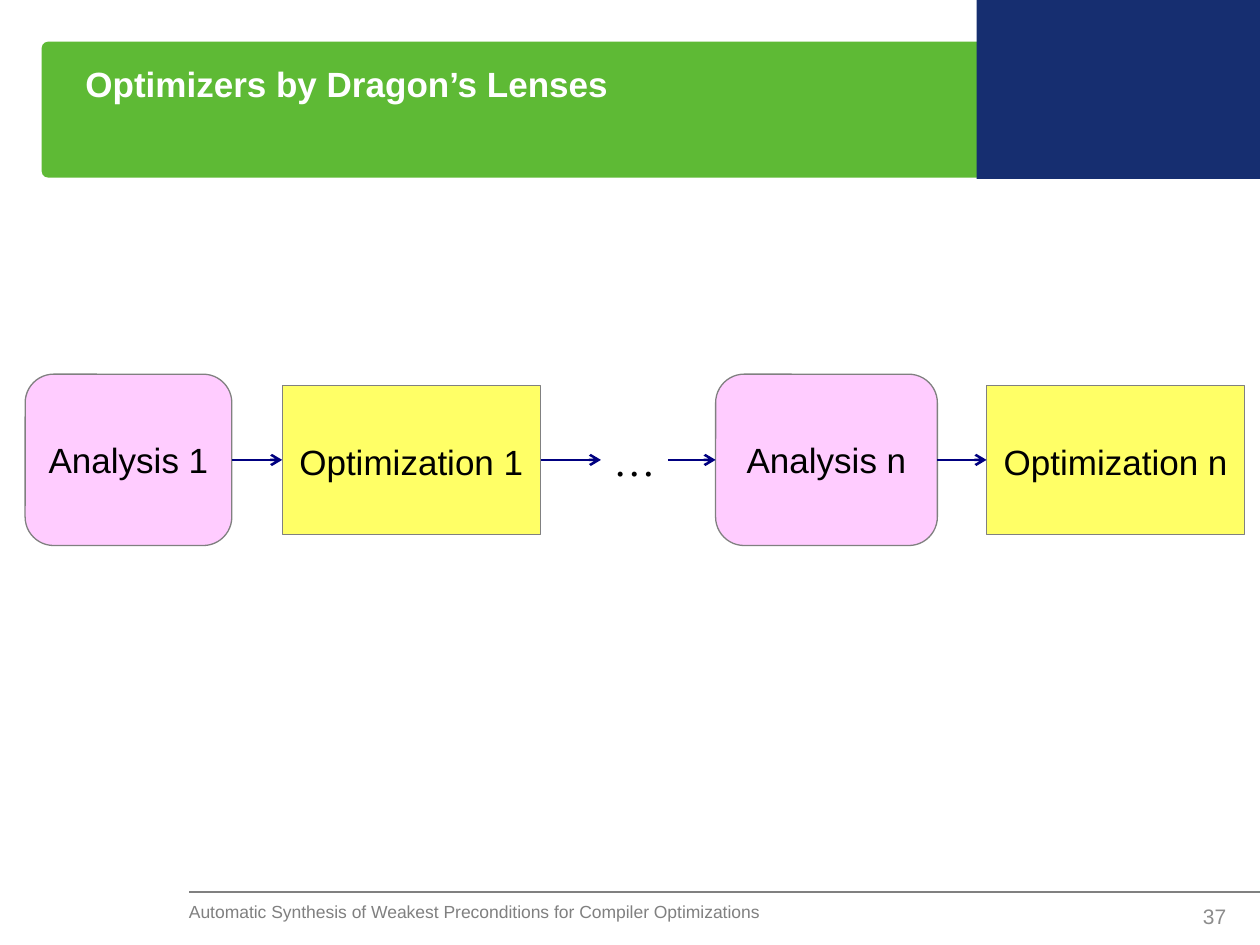
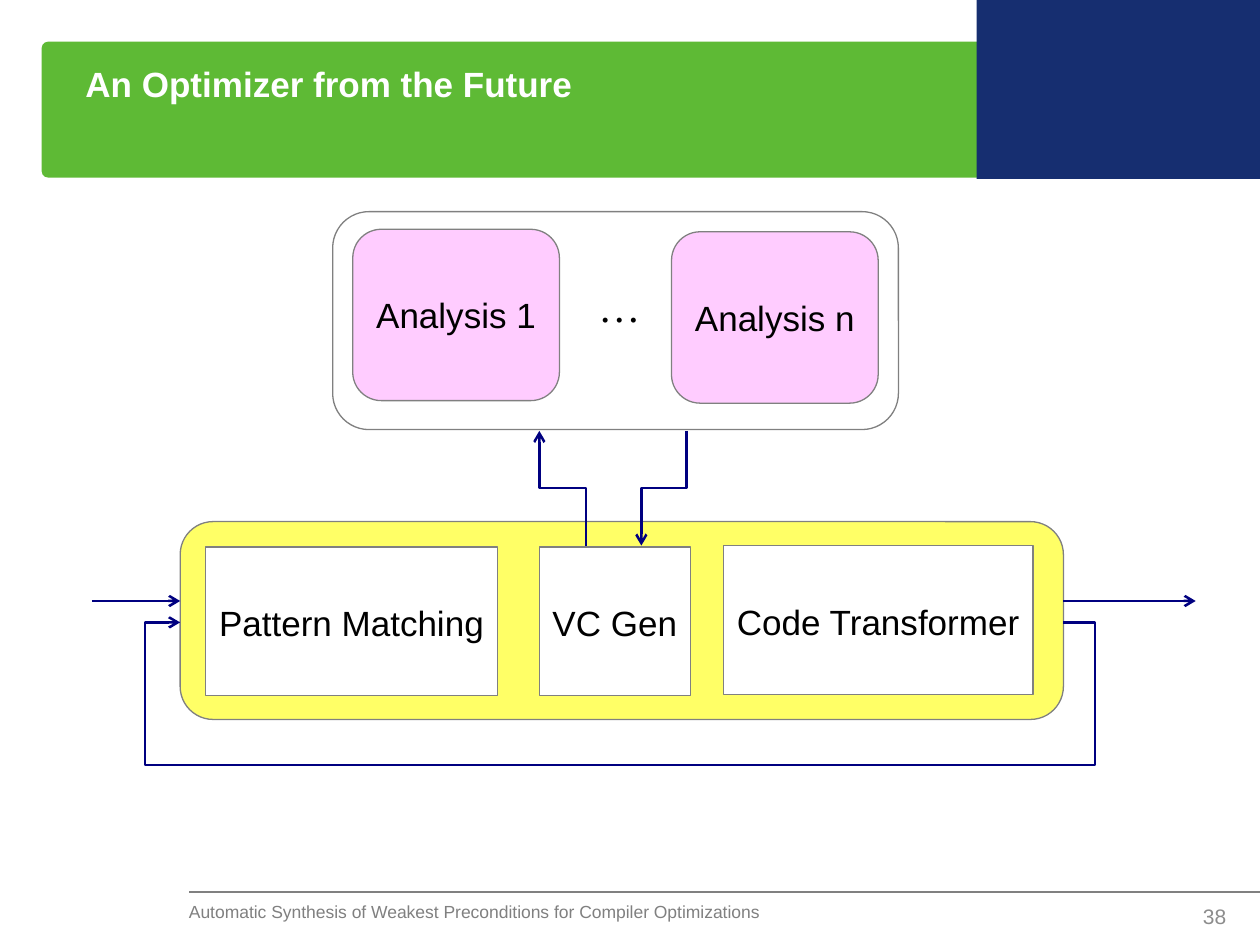
from lxml import etree
from pptx import Presentation
from pptx import util as u
from pptx.dml.color import RGBColor
from pptx.enum import shapes, text
from pptx.oxml import ns

GREEN = RGBColor(0x5E, 0xBA, 0x35)
NAVY = RGBColor(0x16, 0x2E, 0x70)
ARROW_BLUE = RGBColor(0x00, 0x00, 0x80)
PINK = RGBColor(0xFF, 0xCC, 0xFF)
YELLOW = RGBColor(0xFF, 0xFF, 0x66)
WHITE = RGBColor(0xFF, 0xFF, 0xFF)
BLACK = RGBColor(0x00, 0x00, 0x00)
GRAY = RGBColor(0x80, 0x80, 0x80)
PAGE_GRAY = RGBColor(0x8C, 0x8C, 0x8C)

WIDTH, HEIGHT = 10, 7.5
RECTANGLE = shapes.MSO_SHAPE.RECTANGLE
ROUNDED = shapes.MSO_SHAPE.ROUNDED_RECTANGLE
LEFT, CENTER, RIGHT = text.PP_ALIGN.LEFT, text.PP_ALIGN.CENTER, text.PP_ALIGN.RIGHT

FOOTER = "Automatic Synthesis of Weakest Preconditions for Compiler Optimizations"
ELLIPSIS = "…"

ANALYSIS = (ROUNDED, PINK, 1.36)
OPTIMIZATION = (RECTANGLE, YELLOW, 1.18)
COMPONENT = (RECTANGLE, WHITE, 1.18)

# Pipeline steps: label, style, left, width
PIPELINE_TITLE, PIPELINE_PAGE = "Optimizers by Dragon’s Lenses", 37
PIPELINE_MIDDLE = 3.65
PIPELINE = [
    ("Analysis 1", ANALYSIS, 0.2, 1.64),
    ("Optimization 1", OPTIMIZATION, 2.24, 2.05),
    (ELLIPSIS, None, 4.77, 0.53),
    ("Analysis n", ANALYSIS, 5.68, 1.76),
    ("Optimization n", OPTIMIZATION, 7.83, 2.05),
]

# Future optimizer: two containers and the rows of blocks inside them
FUTURE_TITLE, FUTURE_PAGE = "An Optimizer from the Future", 38
ANALYSES_BOX = (2.64, 1.68, 4.49, 1.73)
ENGINE_BOX = (1.43, 4.14, 7.01, 1.57)
ANALYSES = [("Analysis 1", 2.8, 2.5, 1.64), ("Analysis n", 5.33, 2.52, 1.64)]
COMPONENTS = [
    ("Pattern Matching", 1.63, 4.93, 2.32),
    ("VC Gen", 4.28, 4.93, 1.2),
    ("Code Transformer", 5.74, 4.92, 2.46),
]
FLOW_Y, LOOP_Y, LOOP_BOTTOM = 4.77, 4.94, 6.07
QUERIES = [((4.65, 4.33), (4.28, 3.42)), ((5.45, 3.42), (5.09, 4.33))]


def inches(*lengths):
    return [u.Inches(length) for length in lengths]


def add_block(slide, kind, box, fill, label=None, outline=GRAY):
    shape = slide.shapes.add_shape(kind, *inches(*box))
    shape.shadow.inherit = False
    shape.fill.solid()
    shape.fill.fore_color.rgb = fill
    if outline is None:
        shape.line.fill.background()
    else:
        shape.line.color.rgb = outline
        shape.line.width = u.Pt(0)
    if label:
        frame = shape.text_frame
        frame.word_wrap = False
        frame.vertical_anchor = text.MSO_ANCHOR.MIDDLE
        if kind == RECTANGLE:
            frame.margin_top = u.Inches(0.07)
        write(frame.paragraphs[0], label, 20, BLACK, CENTER)
    return shape


def write(paragraph, words, size, color, align=LEFT, bold=False, font="Arial"):
    paragraph.text = words
    paragraph.alignment = align
    paragraph.font.name = font
    paragraph.font.size = u.Pt(size)
    paragraph.font.bold = bold
    paragraph.font.color.rgb = color


def add_text_frame(slide, box, margins=True, wrap=True):
    frame = slide.shapes.add_textbox(*inches(*box)).text_frame
    frame.word_wrap = wrap
    if not margins:
        frame.margin_left = frame.margin_right = 0
        frame.margin_top = frame.margin_bottom = 0
    return frame


def add_ellipsis(slide, left, top):
    frame = add_text_frame(slide, (left, top, 0.44, 0.5), wrap=False)
    write(frame.paragraphs[0], ELLIPSIS, 24, BLACK, CENTER, font="Times New Roman")


def style_line(shape, color, width, arrow=True):
    shape.line.color.rgb = color
    shape.line.width = u.Pt(width)
    if arrow:
        line = shape.line._get_or_add_ln()
        etree.SubElement(line, ns.qn("a:tailEnd"), type="arrow")


def add_line(slide, start, end, color=ARROW_BLUE, width=1.45, arrow=True,
             kind=shapes.MSO_CONNECTOR.STRAIGHT):
    connector = slide.shapes.add_connector(kind, *inches(*start, *end))
    style_line(connector, color, width, arrow)
    etree.SubElement(connector._element.spPr, ns.qn("a:effectLst"))
    return connector


def add_vertical_elbow(slide, start, end):
    """Elbow arrow that leaves and arrives vertically: a quarter-turned connector."""
    (x1, y1), (x2, y2) = start, end
    run, rise = abs(x2 - x1), abs(y2 - y1)
    left, top = (x1 + x2 - rise) / 2, (y1 + y2 - run) / 2
    connector = add_line(slide, (left, top), (left + rise, top + run),
                         kind=shapes.MSO_CONNECTOR.ELBOW)
    down = y2 > y1
    transform = connector._element.spPr.find(ns.qn("a:xfrm"))
    transform.set("rot", str((90 if down else 270) * 60000))
    if (x2 > x1) == down:
        transform.set("flipV", "1")


def add_loop(slide, points):
    corners = [tuple(inches(*point)) for point in points]
    builder = slide.shapes.build_freeform(*corners[0])
    builder.add_line_segments(corners[1:], close=False)
    loop = builder.convert_to_shape()
    loop.shadow.inherit = False
    loop.fill.background()
    style_line(loop, ARROW_BLUE, 1.45)


def add_base_slide(presentation, title, page):
    """Blank slide with the title band, corner box, footer and page number."""
    slide = presentation.slides.add_slide(presentation.slide_layouts[6])
    band = add_block(slide, ROUNDED, (0.33, 0.33, 8.25, 1.08), GREEN, outline=None)
    band.adjustments[0] = 0.05
    add_line(slide, (1.5, 7.08), (WIDTH, 7.08), GRAY, 0.75, arrow=False)
    add_block(slide, RECTANGLE, (7.75, 0, 2.25, 1.42), NAVY, outline=None)

    footer = add_text_frame(slide, (1.5, 7.15, 6.67, 0.25), margins=False)
    write(footer.paragraphs[0], FOOTER, 10, GRAY)
    heading = add_text_frame(slide, (0.58, 0.45, 5.33, 0.88))
    write(heading.paragraphs[0], title, 20, WHITE, bold=True)
    number = add_text_frame(slide, (8.78, 7.07, 1.05, 0.4))
    number.vertical_anchor = text.MSO_ANCHOR.MIDDLE
    write(number.paragraphs[0], str(page), 12, PAGE_GRAY, RIGHT)
    return slide


def add_styled_block(slide, label, style, left, middle, width):
    kind, fill, height = style
    add_block(slide, kind, (left, middle - height / 2, width, height), fill, label)


def build_pipeline(presentation):
    slide = add_base_slide(presentation, PIPELINE_TITLE, PIPELINE_PAGE)
    for label, style, left, width in PIPELINE:
        if style:
            add_styled_block(slide, label, style, left, PIPELINE_MIDDLE, width)
        else:
            add_ellipsis(slide, left, PIPELINE_MIDDLE - 0.25)
    for (_, _, left, width), (_, _, next_left, _) in zip(PIPELINE, PIPELINE[1:]):
        add_line(slide, (left + width, PIPELINE_MIDDLE), (next_left, PIPELINE_MIDDLE))


def build_future(presentation):
    slide = add_base_slide(presentation, FUTURE_TITLE, FUTURE_PAGE)
    add_block(slide, ROUNDED, ANALYSES_BOX, WHITE)
    add_block(slide, ROUNDED, ENGINE_BOX, YELLOW)
    for style, blocks in ((ANALYSIS, ANALYSES), (COMPONENT, COMPONENTS)):
        for label, left, middle, width in blocks:
            add_styled_block(slide, label, style, left, middle, width)
    add_ellipsis(slide, 4.65, 2.18)

    engine_left, engine_right = ENGINE_BOX[0], ENGINE_BOX[0] + ENGINE_BOX[2]
    add_line(slide, (0.73, FLOW_Y), (engine_left, FLOW_Y))
    add_line(slide, (engine_right, FLOW_Y), (9.49, FLOW_Y))
    for start, end in QUERIES:
        add_vertical_elbow(slide, start, end)
    loop_left, loop_right = engine_left - 0.28, engine_right + 0.25
    add_loop(slide, [(engine_right, LOOP_Y), (loop_right, LOOP_Y),
                     (loop_right, LOOP_BOTTOM), (loop_left, LOOP_BOTTOM),
                     (loop_left, LOOP_Y), (engine_left, LOOP_Y)])


def main():
    presentation = Presentation()
    presentation.slide_width, presentation.slide_height = inches(WIDTH, HEIGHT)
    build_pipeline(presentation)
    build_future(presentation)
    presentation.save("out.pptx")


if __name__ == "__main__":
    main()
